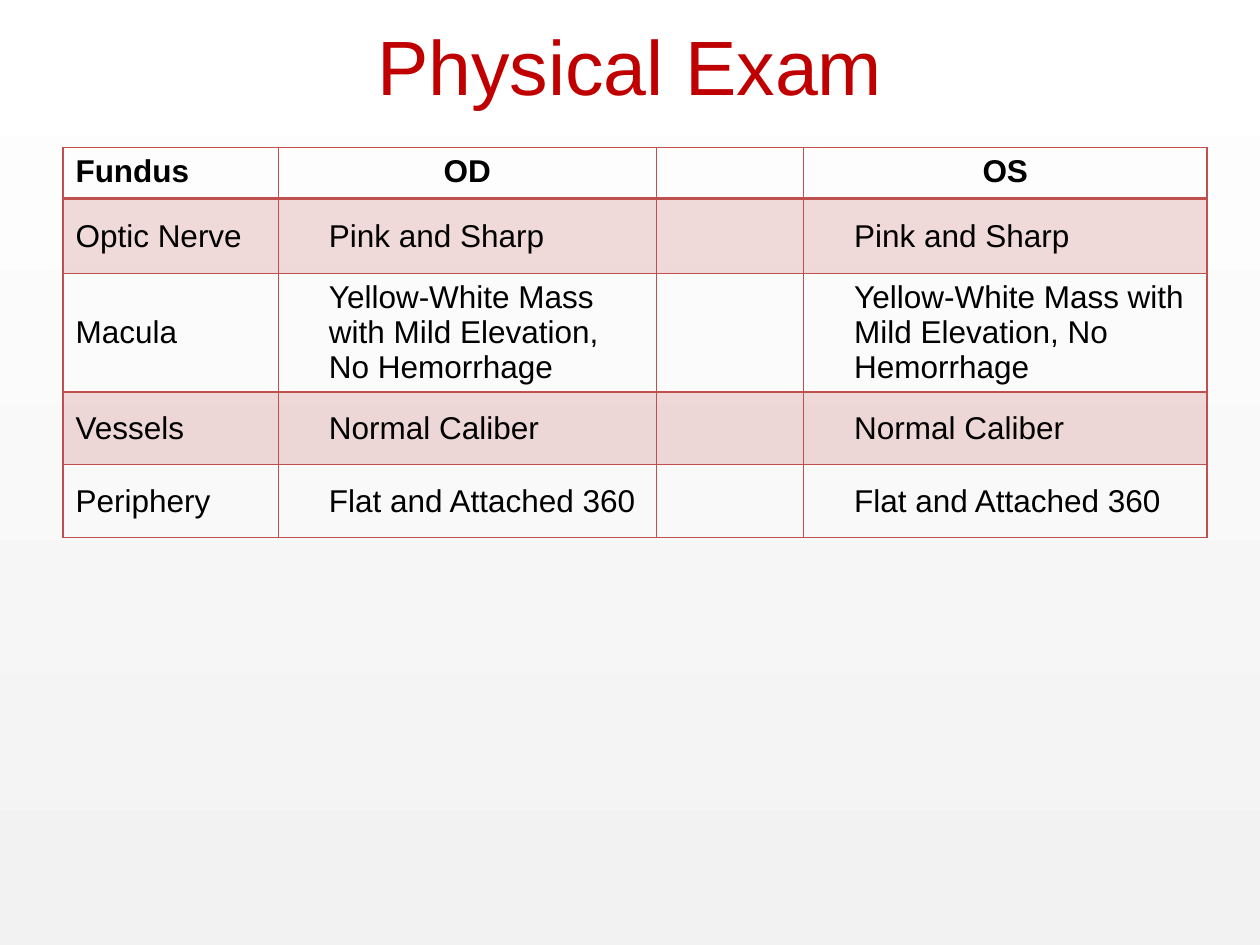
from lxml import etree
from pptx import Presentation
from pptx.dml.color import RGBColor
from pptx.enum.text import MSO_ANCHOR, PP_ALIGN
from pptx.oxml.ns import qn
from pptx.util import Cm, Pt

CENTER, LEFT = PP_ALIGN.CENTER, PP_ALIGN.LEFT
TOP, MIDDLE = MSO_ANCHOR.TOP, MSO_ANCHOR.MIDDLE

FONT = "Arial"
RED = "C0504D"
COL_WIDTHS = [4.34, 7.62, 2.97, 8.13]
ROW_HEIGHTS = [1.04, 1.5, 1.47, 1.47, 1.47]
HEADER = ["Fundus", "OD", "", "OS"]
# The finding is the same for both eyes
FINDINGS = [
    ("Optic Nerve", "Pink and Sharp"),
    ("Macula", "Yellow-White Mass with Mild Elevation, No Hemorrhage"),
    ("Vessels", "Normal Caliber"),
    ("Periphery", "Flat and Attached 360"),
]


def rgb(color):
    return RGBColor.from_string(color)


def set_font(p, size, color, bold=False):
    font = p.font
    font.name, font.size, font.bold = FONT, Pt(size), bold
    font.color.rgb = rgb(color)


def set_background(s):
    fill = s.background.fill
    fill.gradient()
    fill.gradient_angle = 90
    for stop, color in zip(fill.gradient_stops, ("F2F2F2", "FFFFFF")):
        stop.color.rgb = rgb(color)


def add_title(s, text):
    title = s.shapes.title
    title.left, title.top = Cm(1.27), Cm(-0.28)
    title.width, title.height = Cm(22.86), Cm(3.18)
    tf = title.text_frame
    tf.text = text
    tf.vertical_anchor = MIDDLE
    p = tf.paragraphs[0]
    p.alignment = CENTER
    set_font(p, 44, "C00000")


def set_border(cell, side, width):
    tcPr = cell._tc.get_or_add_tcPr()
    ln = etree.SubElement(tcPr, qn(f"a:ln{side}"), w=str(Pt(width)))
    fill = etree.SubElement(ln, qn("a:solidFill"))
    etree.SubElement(fill, qn("a:srgbClr"), val=RED)


def tint_cell(cell):
    """Fill the cell with red at 20 % opacity."""
    cell.fill.solid()
    cell.fill.fore_color.rgb = rgb(RED)
    color = cell._tc.tcPr.find(qn("a:solidFill"))[0]
    etree.SubElement(color, qn("a:alpha"), val="20000")


def format_cell(cell, text, row, col):
    is_header = row == 0
    cell.text = text
    cell.vertical_anchor = TOP if is_header else MIDDLE
    if not is_header and col > 0:
        cell.margin_left = Cm(1.02)
    p = cell.text_frame.paragraphs[0]
    p.alignment = CENTER if is_header and col > 0 else LEFT
    set_font(p, 18, "000000", bold=is_header)
    # Borders must come before the fill in the cell properties
    for side in "LRTB":
        thick = (row, side) in ((0, "B"), (1, "T"))
        set_border(cell, side, 2 if thick else 1)
    if row % 2:
        tint_cell(cell)
    else:
        cell.fill.background()


def add_exam_table(s):
    rows = [HEADER] + [[part, finding, "", finding] for part, finding in FINDINGS]
    table = s.shapes.add_table(
        len(rows), len(HEADER), Cm(1.27), Cm(2.97),
        Cm(sum(COL_WIDTHS)), Cm(sum(ROW_HEIGHTS))).table
    for column, width in zip(table.columns, COL_WIDTHS):
        column.width = Cm(width)
    for table_row, height in zip(table.rows, ROW_HEIGHTS):
        table_row.height = Cm(height)
    for row, texts in enumerate(rows):
        for col, text in enumerate(texts):
            format_cell(table.cell(row, col), text, row, col)


def main():
    prs = Presentation()
    prs.slide_width, prs.slide_height = Cm(25.4), Cm(19.05)
    s = prs.slides.add_slide(prs.slide_layouts[5])
    set_background(s)
    add_title(s, "Physical Exam")
    add_exam_table(s)
    prs.save("out.pptx")


if __name__ == "__main__":
    main()
